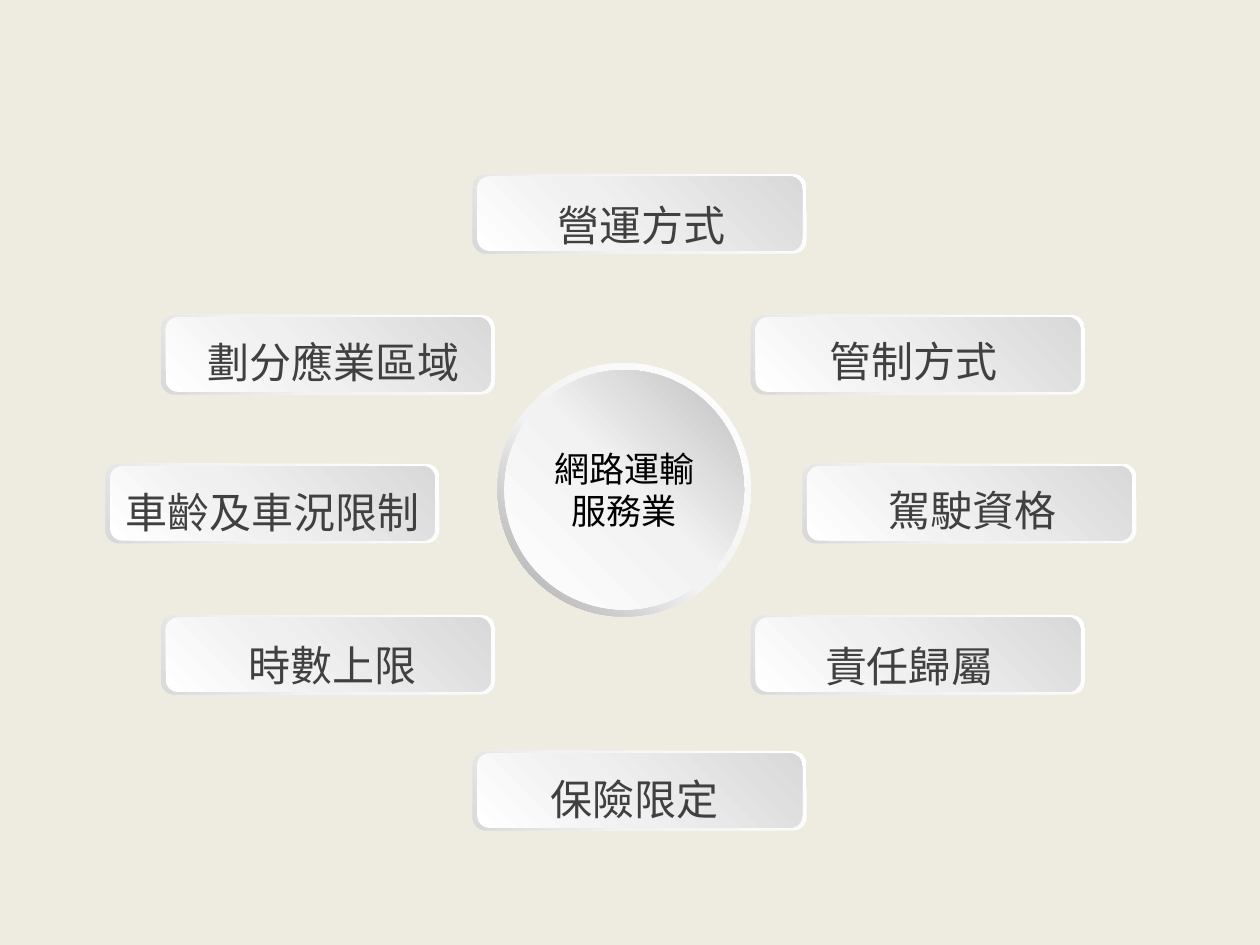
from dataclasses import dataclass

from lxml import etree
from pptx import Presentation
from pptx.dml import color
from pptx.enum import shapes, text
from pptx.oxml import ns
from pptx.util import Cm, Pt


@dataclass(frozen=True)
class Theme:
    background: str = "EEECE1"
    label: str = "404040"
    hub_text: str = "000000"
    font: str = "Noto Sans CJK SC"
    label_size: int = 24
    hub_size: int = 20
    card_rim: tuple = ((0, "FFFFFF"), (62, "F2F2F2"), (100, "D9D9D9"))
    card_face: tuple = ((0, "FFFFFF"), (42, "F0F0F0"), (100, "D9D9D9"))
    hub_rim: tuple = ((0, "FFFFFF"), (55, "F2F2F2"), (100, "A6A6A6"))
    hub_face: tuple = ((0, "FFFFFF"), (51, "F2F2F2"), (100, "BFBFBF"))


THEME = Theme()
RIM_ANGLE, FACE_ANGLE = 135, 315
CARD_WIDTH, CARD_HEIGHT = 6.73, 1.6
LABEL_WIDTH, LABEL_HEIGHT = 6.6, 1.27

# label, card left, card top, label shift from card centre, label drop from card top
CARDS = [
    ("責任歸屬", 15.14, 12.4, -0.18, 0.38),
    ("時數上限", 3.25, 12.4, 0.09, 0.36),
    ("駕駛資格", 16.18, 9.35, 0.06, 0.3),
    ("車齡及車況限制", 2.13, 9.35, 0, 0.33),
    ("管制方式", 15.14, 6.35, -0.08, 0.28),
    ("劃分應業區域", 3.25, 6.35, 0.1, 0.3),
    ("保險限定", 9.53, 15.14, -0.1, 0.33),
    ("營運方式", 9.53, 3.51, 0.03, 0.38),
]


def fill_gradient(shape, stops, angle):
    shape.fill.gradient()
    gradient = shape.element.spPr.find(ns.qn("a:gradFill"))
    stop_list = gradient.find(ns.qn("a:gsLst"))
    for stop in list(stop_list):
        stop_list.remove(stop)
    for position, value in stops:
        stop = etree.SubElement(stop_list, ns.qn("a:gs"), pos=str(position * 1000))
        etree.SubElement(stop, ns.qn("a:srgbClr"), val=value)
    gradient.find(ns.qn("a:lin")).set("ang", str(angle * 60000))


def add_plate(group, kind, left, top, width, height, stops, angle):
    shape = group.shapes.add_shape(kind, Cm(left), Cm(top), Cm(width), Cm(height))
    shape.shadow.inherit = False
    shape.line.fill.background()
    fill_gradient(shape, stops, angle)
    return shape


def write_text(shape, content, *, size, rgb, anchor=text.MSO_ANCHOR.TOP):
    frame = shape.text_frame
    frame.word_wrap = True
    frame.vertical_anchor = anchor
    paragraph = frame.paragraphs[0]
    paragraph.alignment = text.PP_ALIGN.CENTER
    run = paragraph.add_run()
    run.text = content
    run.font.size = Pt(size)
    run.font.name = THEME.font
    run.font.color.rgb = color.RGBColor.from_string(rgb)
    etree.SubElement(run.font._element, ns.qn("a:ea"), typeface=THEME.font)


def add_card(slide, label, left, top, shift, drop):
    group = slide.shapes.add_group_shape()
    kind = shapes.MSO_SHAPE.ROUNDED_RECTANGLE
    add_plate(group, kind, left, top, CARD_WIDTH, CARD_HEIGHT, THEME.card_rim, RIM_ANGLE)
    add_plate(group, kind, left + 0.09, top + 0.05, CARD_WIDTH - 0.18, CARD_HEIGHT - 0.1,
              THEME.card_face, FACE_ANGLE)
    label_left = left + (CARD_WIDTH - LABEL_WIDTH) / 2 + shift
    box = slide.shapes.add_textbox(Cm(label_left), Cm(top + drop),
                                   Cm(LABEL_WIDTH), Cm(LABEL_HEIGHT))
    write_text(box, label, size=THEME.label_size, rgb=THEME.label)


def add_hub(slide, label, left, top, diameter, rim):
    group = slide.shapes.add_group_shape()
    ring = add_plate(group, shapes.MSO_SHAPE.DONUT, left, top, diameter, diameter,
                     THEME.hub_rim, RIM_ANGLE)
    ring.adjustments[0] = 0.05
    face = add_plate(group, shapes.MSO_SHAPE.OVAL, left + rim, top + rim,
                     diameter - 2 * rim, diameter - 2 * rim, THEME.hub_face, FACE_ANGLE)
    write_text(face, label, size=THEME.hub_size, rgb=THEME.hub_text,
               anchor=text.MSO_ANCHOR.MIDDLE)


def main():
    presentation = Presentation()
    presentation.slide_width, presentation.slide_height = Cm(25.4), Cm(19.05)
    slide = presentation.slides.add_slide(presentation.slide_layouts[6])
    slide.background.fill.solid()
    slide.background.fill.fore_color.rgb = color.RGBColor.from_string(THEME.background)
    for card in CARDS:
        add_card(slide, *card)
    add_hub(slide, "網路運輸服務業", left=10.03, top=7.32, diameter=5.11, rim=0.14)
    presentation.save("out.pptx")


if __name__ == "__main__":
    main()
